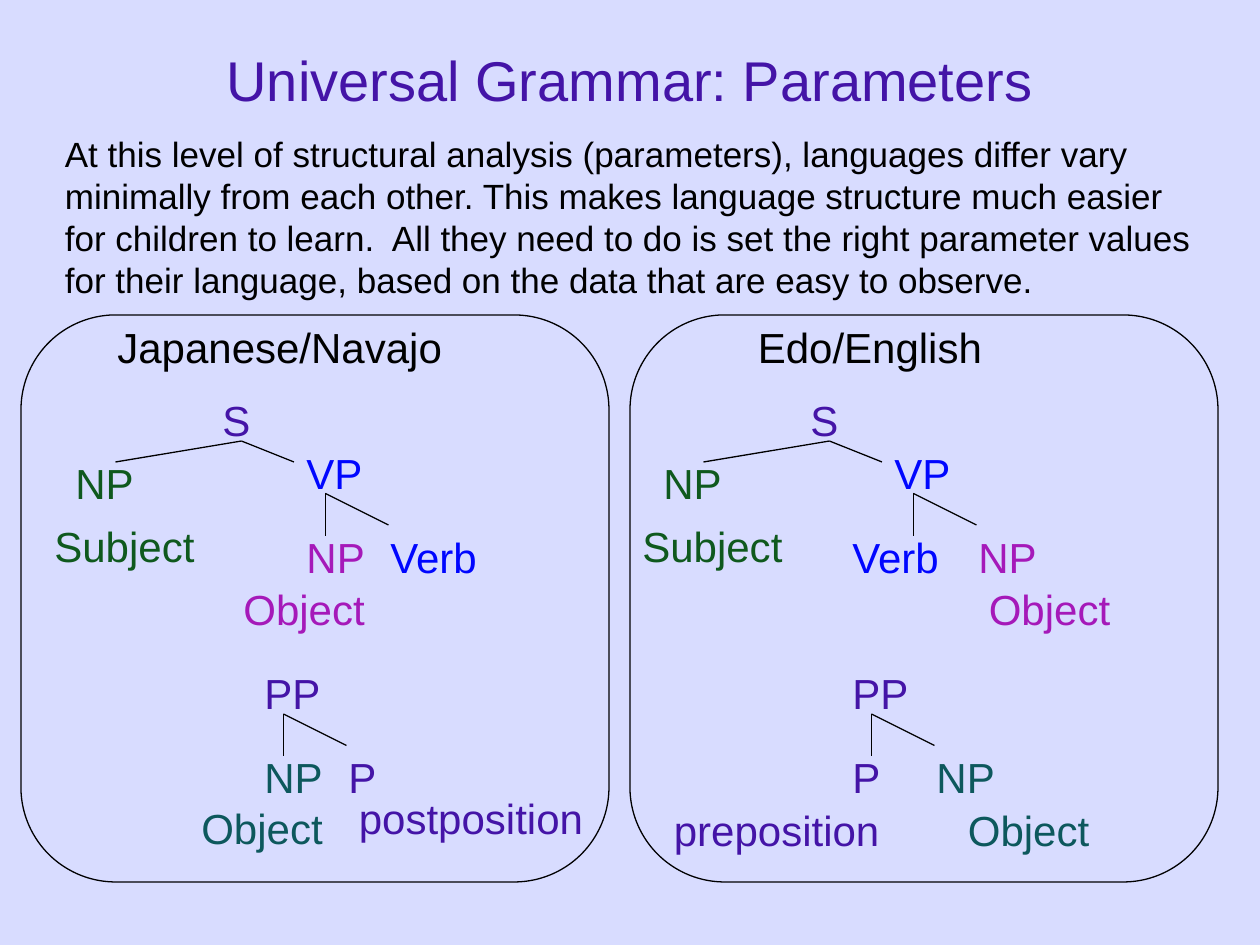
import pptx
import pptx.dml.color
import pptx.enum.shapes
import pptx.enum.text
import pptx.oxml.ns
import pptx.util
from lxml import etree

Pt = pptx.util.Pt
Align = pptx.enum.text.PP_ALIGN
Anchor = pptx.enum.text.MSO_ANCHOR

BLACK, VIOLET, BLUE = "000000", "4414A7", "0006FF"
GREEN, MAGENTA, TEAL = "0F591E", "A519B9", "0D585D"

CATEGORY_WIDTHS = {"S": 30, "P": 30, "NP": 48, "VP": 48, "PP": 48}
WORD_WIDTHS = {"Verb": 78, "Object": 102, "Subject": 186,
               "preposition": 168, "postposition": 168,
               "Japanese/Navajo": 246, "Edo/English": 144}

# Labels are (text, colour, x, y), measured from the corner of the tree.
SHARED_LABELS = [
    ("S", VIOLET, 96, 42), ("NP", GREEN, 12, 78), ("Subject", GREEN, 0, 114),
    ("VP", BLUE, 144, 72), ("PP", VIOLET, 120, 198),
]
HEAD_LAST_LABELS = [
    ("Japanese/Navajo", BLACK, 36, 0),
    ("NP", MAGENTA, 144, 120), ("Object", MAGENTA, 108, 150),
    ("Verb", BLUE, 192, 120),
    ("NP", TEAL, 120, 246), ("Object", TEAL, 84, 275),
    ("P", VIOLET, 168, 246), ("postposition", VIOLET, 174, 269.5),
]
HEAD_FIRST_LABELS = [
    ("Edo/English", BLACK, 66, 0),
    ("Verb", BLUE, 120, 120),
    ("NP", MAGENTA, 192, 120), ("Object", MAGENTA, 198, 150),
    ("P", VIOLET, 120, 246), ("preposition", VIOLET, 18, 276),
    ("NP", TEAL, 168, 246), ("Object", TEAL, 186, 276),
]
# Each apex is followed by the ends of its two branches.
BRANCHES = [
    ((114, 72), (42, 84), (144, 84)),
    ((162, 102), (162, 126), (198, 120)),
    ((138, 228), (138, 252), (174, 246)),
]


def colour(value):
    return pptx.dml.color.RGBColor.from_string(value)


def add_text(page, text, left, top, width, height, size, text_colour,
             wrap=True, align=Align.LEFT, anchor=Anchor.TOP):
    box = page.shapes.add_textbox(Pt(left), Pt(top), Pt(width), Pt(height))
    frame = box.text_frame
    frame.word_wrap = wrap
    frame.vertical_anchor = anchor
    para = frame.paragraphs[0]
    para.alignment = align
    span = para.add_run()
    span.text = text
    span.font.name = "Arial"
    span.font.size = Pt(size)
    span.font.color.rgb = colour(text_colour)


def add_branch(page, start, end):
    line = page.shapes.add_connector(
        pptx.enum.shapes.MSO_CONNECTOR.STRAIGHT,
        Pt(start[0]), Pt(start[1]), Pt(end[0]), Pt(end[1]))
    line.line.color.rgb = colour(BLACK)
    line.line.width = Pt(0.75)
    properties = line._element.spPr
    etree.SubElement(properties, pptx.oxml.ns.qn("a:effectLst"))


def add_panel(page, left, top, width, height):
    panel = page.shapes.add_shape(
        pptx.enum.shapes.MSO_SHAPE.ROUNDED_RECTANGLE,
        Pt(left), Pt(top), Pt(width), Pt(height))
    panel.adjustments[0] = 0.167
    panel.shadow.inherit = False
    panel.fill.background()
    panel.line.color.rgb = colour(BLACK)
    panel.line.width = Pt(0.75)


def add_trees(page, left, top, labels):
    """Draw the sentence tree and the phrase tree of one language type."""
    for apex, *ends in BRANCHES:
        for end in ends:
            add_branch(page, (left + apex[0], top + apex[1]),
                       (left + end[0], top + end[1]))
    for text, text_colour, x, y in SHARED_LABELS + labels:
        is_word = text in WORD_WIDTHS
        width = WORD_WIDTHS[text] if is_word else CATEGORY_WIDTHS[text]
        add_text(page, text, left + x, top + y, width, 36, 24, text_colour,
                 wrap=is_word)


def add_introduction(page, left, top, width, height):
    add_text(page, "At this level of structural analysis (parameters), "
             "languages differ vary minimally from each other. This makes "
             "language structure much easier for children to learn.  All they "
             "need to do is set the right parameter values for their language, "
             "based on the data that are easy to observe.",
             left, top, width, height, 20, BLACK)


def main():
    deck = pptx.Presentation()
    deck.slide_width, deck.slide_height = Pt(720), Pt(540)
    page = deck.slides.add_slide(deck.slide_layouts[6])
    page.background.fill.solid()
    page.background.fill.fore_color.rgb = colour("D8DCFF")

    add_text(page, "Universal Grammar: Parameters", 0, 0, 720, 90, 32, VIOLET,
             align=Align.CENTER, anchor=Anchor.MIDDLE)
    add_introduction(page, 30, 72, 660, 103)
    for panel_left, tree_left, labels in ((12, 24, HEAD_LAST_LABELS),
                                          (360, 360, HEAD_FIRST_LABELS)):
        add_panel(page, panel_left, 180, 336, 324)
        add_trees(page, tree_left, 180, labels)
    deck.save("out.pptx")


if __name__ == "__main__":
    main()
